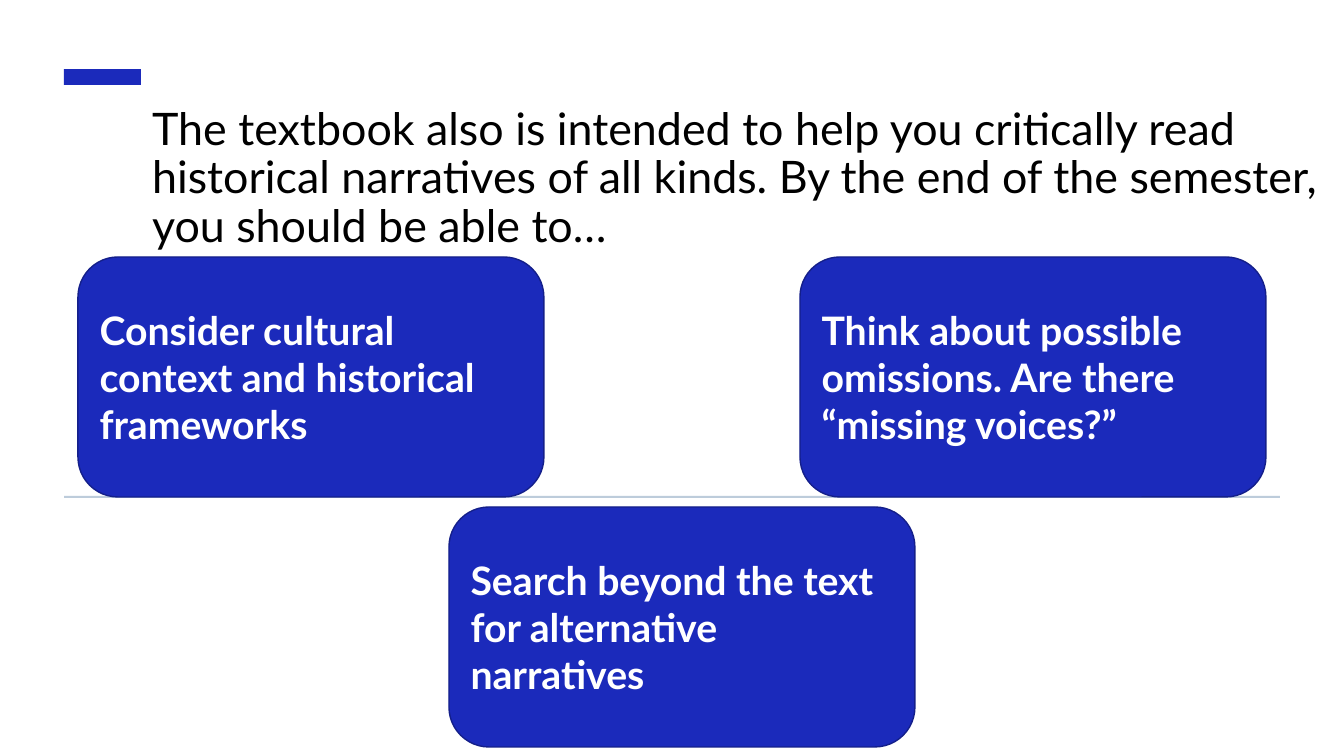
from dataclasses import dataclass

from pptx import Presentation
from pptx.dml.color import RGBColor
from pptx.enum.shapes import MSO_SHAPE
from pptx.enum.text import MSO_ANCHOR, MSO_AUTO_SIZE, PP_ALIGN
from pptx.util import Emu, Pt

RECTANGLE = MSO_SHAPE.RECTANGLE
ROUNDED = MSO_SHAPE.ROUNDED_RECTANGLE
MIDDLE, BOTTOM = MSO_ANCHOR.MIDDLE, MSO_ANCHOR.BOTTOM
LEFT = PP_ALIGN.LEFT
NO_AUTOFIT = MSO_AUTO_SIZE.NONE

# Content
TITLE = ("The textbook also is intended to help you critically read historical "
         "narratives of all kinds. By the end of the semester, you should be able to…")
UPPER_GOALS = ["Consider cultural context and historical frameworks",
               "Think about possible omissions. Are there “missing voices?”"]
LOWER_GOAL = "Search beyond the text for alternative narratives"

# Layout in px: left, top, width, height
PAGE_WIDTH, PAGE_HEIGHT = 1344, 756
ACCENT_BAR = (64, 69, 77, 16)
DIVIDER = (64, 496, 1216, 2)
TITLE_AREA = (142, 46, 1230, 211)
CARD_WIDTH, CARD_HEIGHT = 466, 240
CARD_LEFT, CARD_STEP = 78, 722
UPPER_TOP, LOWER_TOP = 257, 507
LOWER_LEFT = 449


@dataclass(frozen=True)
class Theme:
    font: str = "Lato"
    blue: str = "1B2ABB"
    outline: str = "141F8A"
    divider: str = "BDCCDB"
    black: str = "000000"
    white: str = "FFFFFF"
    title_size: int = 32
    card_size: int = 28


THEME = Theme()


def px(value):
    return Emu(round(value * 914400 / 100.8))


def write(shape, text, *, size, color, bold=False, anchor=MIDDLE, spacing=1.0):
    frame = shape.text_frame
    frame.word_wrap = True
    frame.auto_size = NO_AUTOFIT
    frame.vertical_anchor = anchor
    para = frame.paragraphs[0]
    para.alignment = LEFT
    para.line_spacing = spacing
    span = para.add_run()
    span.text = text
    span.font.name = THEME.font
    span.font.size = Pt(size)
    span.font.bold = bold
    span.font.color.rgb = RGBColor.from_string(color)


def add_block(page, kind, area, fill, outline=None):
    block = page.shapes.add_shape(kind, *map(px, area))
    block.shadow.inherit = False
    block.fill.solid()
    block.fill.fore_color.rgb = RGBColor.from_string(fill)
    if outline:
        block.line.color.rgb = RGBColor.from_string(outline)
        block.line.width = Pt(1)
    else:
        block.line.fill.background()
    return block


def main():
    deck = Presentation()
    deck.slide_width, deck.slide_height = px(PAGE_WIDTH), px(PAGE_HEIGHT)
    page = deck.slides.add_slide(deck.slide_layouts[5])

    # Accent bar and divider
    add_block(page, RECTANGLE, ACCENT_BAR, THEME.blue)
    add_block(page, RECTANGLE, DIVIDER, THEME.divider)

    # Title
    title = page.shapes.title
    title.left, title.top, title.width, title.height = map(px, TITLE_AREA)
    write(title, TITLE, size=THEME.title_size, color=THEME.black,
          anchor=BOTTOM, spacing=0.9)

    # Goal cards: two above the divider, one below
    cards = [(goal, CARD_LEFT + index * CARD_STEP, UPPER_TOP)
             for index, goal in enumerate(UPPER_GOALS)]
    cards.append((LOWER_GOAL, LOWER_LEFT, LOWER_TOP))
    for goal, left, top in cards:
        card = add_block(page, ROUNDED, (left, top, CARD_WIDTH, CARD_HEIGHT),
                         THEME.blue, THEME.outline)
        write(card, goal, size=THEME.card_size, color=THEME.white, bold=True)

    deck.save("out.pptx")


if __name__ == "__main__":
    main()
